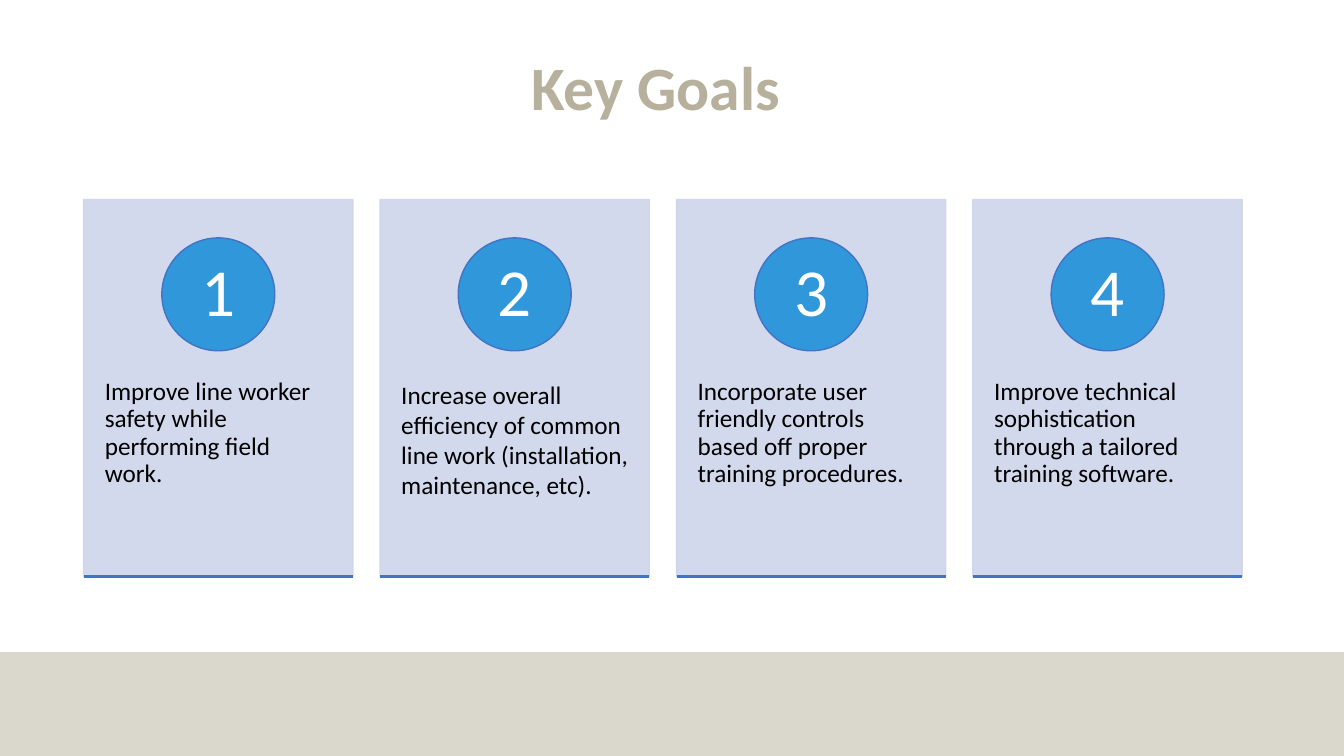
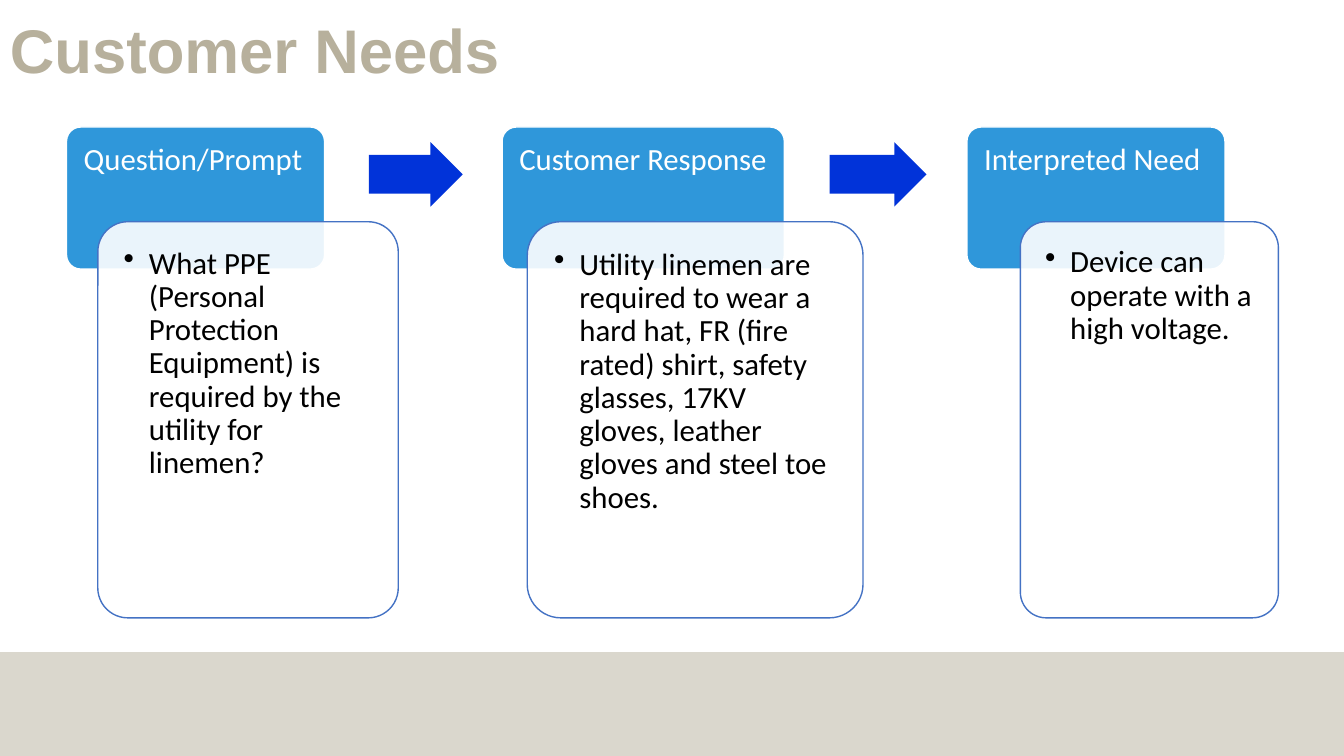
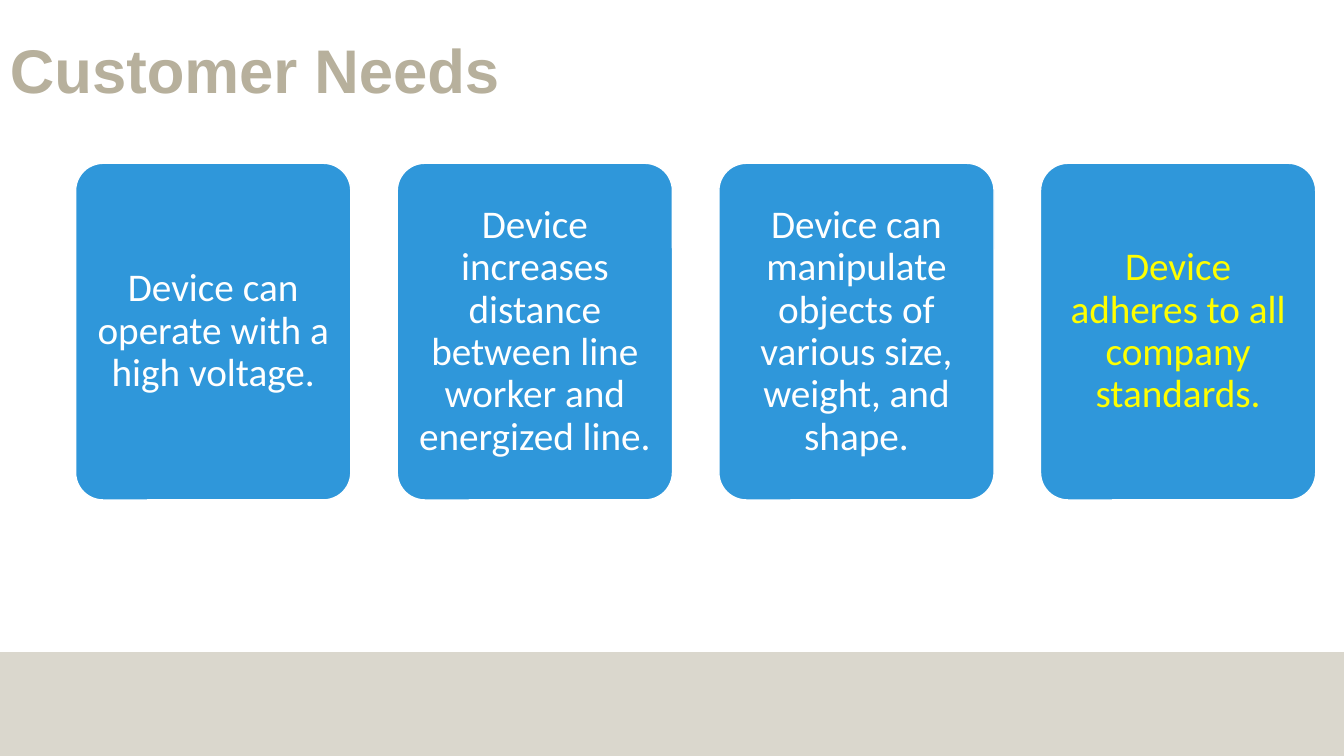
from dataclasses import dataclass

from lxml.etree import SubElement
from pptx import Presentation
from pptx.dml.color import RGBColor as Rgb
from pptx.enum.shapes import MSO_CONNECTOR as Connector, MSO_SHAPE as Preset
from pptx.enum.text import MSO_ANCHOR as Anchor, PP_ALIGN as Align
from pptx.oxml.ns import qn
from pptx.util import Inches, Pt


@dataclass(frozen=True)
class Theme:
    sand: str = "B7B09C"
    blue: str = "2F97DA"
    outline: str = "4472C4"
    arrow: str = "0133D9"
    card: str = "CFD5EA"
    white: str = "FFFFFF"
    black: str = "000000"
    highlight: str = "FFFF00"
    body_font: str = "Calibri"
    title_font: str = "Arial"
    title_size: int = 44
    number_size: int = 48
    need_size: int = 28
    step_size: int = 22
    goal_size: int = 18
    line_spacing: float = 0.9
    corner: float = 0.1


THEME = Theme()
SLIDE_WIDTH, SLIDE_HEIGHT = 13.33, 7.5

GOALS = [
    # text, line spacing
    ("Improve line worker safety while performing field work.", THEME.line_spacing),
    ("Increase overall efficiency of common line work "
     "(installation, maintenance, etc).", 1.0),
    ("Incorporate user friendly controls based off proper training procedures.",
     THEME.line_spacing),
    ("Improve technical sophistication through a tailored training software.",
     THEME.line_spacing),
]

STEPS = [
    # heading, heading left and width, detail, detail left and width
    ("Question/Prompt", 0.66, 2.56,
     "What PPE (Personal Protection Equipment) is required by the utility for linemen?",
     0.97, 2.98),
    ("Customer Response", 4.98, 2.8,
     "Utility linemen are required to wear a hard hat, FR (fire rated) shirt, safety "
     "glasses, 17KV gloves, leather gloves and steel toe shoes.", 5.23, 3.33),
    ("Interpreted Need", 9.59, 2.56,
     "Device can operate with a high voltage.", 10.12, 2.56),
]
STEP_ARROWS = [(3.66, 0.93), (8.23, 0.96)]  # left, width

NEEDS = [
    ("Device can operate with a high voltage.", THEME.white),
    ("Device increases distance between line worker and energized line.", THEME.white),
    ("Device can manipulate objects of various size, weight, and shape.", THEME.white),
    ("Device adheres to all company standards.", THEME.highlight),
]


# Basic elements
def set_opacity(properties, percent):
    """Make every solid colour in the shape properties partly transparent."""
    for color in properties.iter(qn("a:srgbClr")):
        SubElement(color, qn("a:alpha")).set("val", str(percent * 1000))


def add_block(slide, preset, left, top, width, height, fill, line=None):
    shape = slide.shapes.add_shape(
        preset, Inches(left), Inches(top), Inches(width), Inches(height))
    shape.shadow.inherit = False
    shape.fill.solid()
    shape.fill.fore_color.rgb = Rgb.from_string(fill)
    if line:
        shape.line.color.rgb = Rgb.from_string(line)
        shape.line.width = Pt(1)
    else:
        shape.line.fill.background()
    if preset == Preset.ROUNDED_RECTANGLE:
        shape.adjustments[0] = THEME.corner
    return shape


def write(shape, text, size, color, margins, font=THEME.body_font, align=Align.LEFT,
          anchor=Anchor.TOP, spacing=THEME.line_spacing, bold=False, bullet=False):
    """Fill a shape with one paragraph; margins are left, top, right, bottom."""
    frame = shape.text_frame
    frame.word_wrap = True
    frame.vertical_anchor = anchor
    (frame.margin_left, frame.margin_top,
     frame.margin_right, frame.margin_bottom) = map(Inches, margins)
    paragraph = frame.paragraphs[0]
    paragraph.text = text
    paragraph.alignment = align
    paragraph.line_spacing = spacing
    if bullet:
        properties = paragraph._p.get_or_add_pPr()
        properties.set("marL", str(Inches(0.25)))
        properties.set("indent", str(-Inches(0.25)))
        SubElement(properties, qn("a:buChar")).set("char", "•")
    paragraph.font.name = font
    paragraph.font.size = Pt(size)
    paragraph.font.bold = bold
    paragraph.font.color.rgb = Rgb.from_string(color)


def add_rule(slide, left, top, width):
    rule = slide.shapes.add_connector(
        Connector.STRAIGHT, Inches(left), Inches(top), Inches(left + width), Inches(top))
    rule.line.color.rgb = Rgb.from_string(THEME.outline)
    rule.line.width = Pt(1.5)
    SubElement(rule.element.spPr, qn("a:effectLst"))


# Shared frame: footer band and title
def add_slide(presentation, title, left, top, width, height, font=THEME.title_font):
    slide = presentation.slides.add_slide(presentation.slide_layouts[6])
    band = add_block(slide, Preset.RECTANGLE, 0, 6.47, SLIDE_WIDTH, 1.03, THEME.sand)
    set_opacity(band.element.spPr, 50)
    box = slide.shapes.add_textbox(
        Inches(left), Inches(top), Inches(width), Inches(height))
    write(box, title, THEME.title_size, THEME.sand, (0.1, 0.05, 0.1, 0.05),
          font=font, anchor=Anchor.MIDDLE, bold=True)
    return slide


# Content elements
def add_goal(slide, left, number, text, spacing):
    top, width, height, circle = 1.98, 2.67, 3.74, 1.12
    card = add_block(slide, Preset.RECTANGLE, left, top, width, height,
                     THEME.card, THEME.card)
    set_opacity(card.element.spPr, 90)
    write(card, text, THEME.goal_size, THEME.black, (0.21, 1.78, 0.21, 0.43),
          spacing=spacing)
    badge = add_block(slide, Preset.OVAL, left + (width - circle) / 2, 2.36,
                      circle, circle, THEME.blue, THEME.outline)
    write(badge, str(number), THEME.number_size, THEME.white,
          (0.09, 0.01, 0.09, 0.01), align=Align.CENTER, anchor=Anchor.MIDDLE)
    add_rule(slide, left, top + height, width)


def add_step(slide, heading, left, width, detail, detail_left, detail_width):
    header = add_block(slide, Preset.ROUNDED_RECTANGLE, left, 1.26, width, 1.41,
                       THEME.blue, THEME.white)
    write(header, heading, THEME.step_size, THEME.white, (0.13, 0.13, 0.09, 0.09))
    panel = add_block(slide, Preset.ROUNDED_RECTANGLE, detail_left, 2.2,
                      detail_width, 3.93, THEME.white, THEME.outline)
    set_opacity(panel.element.spPr.find(qn("a:solidFill")), 90)
    write(panel, detail, THEME.step_size, THEME.black, (0.17,) * 4, bullet=True)


def add_step_arrow(slide, left, width):
    arrow = add_block(slide, Preset.RIGHT_ARROW, left, 1.41, width, 0.64, THEME.arrow)
    arrow.adjustments[0] = 0.6
    arrow.adjustments[1] = 0.5


def add_need(slide, left, text, color):
    card = add_block(slide, Preset.ROUNDED_RECTANGLE, left, 1.62, 2.73, 3.34,
                     THEME.blue, THEME.white)
    write(card, text, THEME.need_size, color, (0.12,) * 4,
          align=Align.CENTER, anchor=Anchor.MIDDLE)


def main():
    presentation = Presentation()
    presentation.slide_width = Inches(SLIDE_WIDTH)
    presentation.slide_height = Inches(SLIDE_HEIGHT)

    # Key goals
    slide = add_slide(presentation, "Key Goals", 5.17, 0.17, 2.81, 1.45,
                      font=THEME.body_font)
    for index, (text, spacing) in enumerate(GOALS):
        add_goal(slide, 0.83 + 2.94 * index, index + 1, text, spacing)

    # From question to need
    slide = add_slide(presentation, "Customer Needs", 0, 0, 5.47, 1.07)
    for step in STEPS:
        add_step(slide, *step)
    for left, width in STEP_ARROWS:
        add_step_arrow(slide, left, width)

    # List of needs
    slide = add_slide(presentation, "Customer Needs", 0, 0, 5.47, 1.45)
    for index, (text, color) in enumerate(NEEDS):
        add_need(slide, 0.75 + 3.19 * index, text, color)

    presentation.save("out.pptx")


if __name__ == "__main__":
    main()
